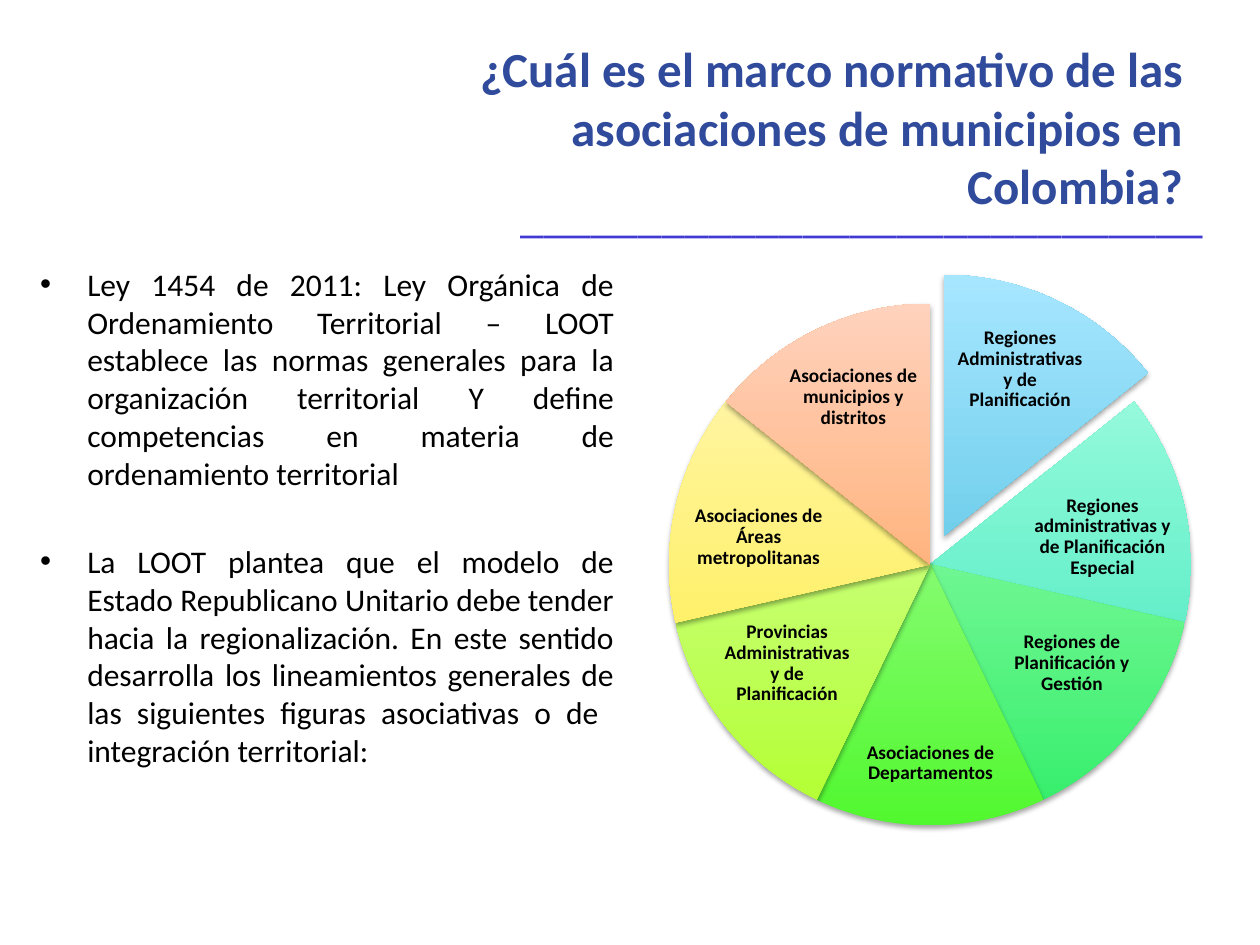
"""Build a slide on the legal framework of municipal associations in Colombia."""
from lxml import etree
from pptx import Presentation
from pptx import util as u
from pptx.dml.color import RGBColor
from pptx.enum import shapes, text
from pptx.oxml.ns import qn


def colour(value):
    return RGBColor.from_string(value)


def write(words, at, size, shade="000000", bold=False, align="CENTER",
          anchor="MIDDLE", inset=(0.25, 0.13), spacing=None, bullet=None, gap=0):
    box = page.shapes.add_textbox(*[u.Cm(n) for n in at])
    frame = box.text_frame
    frame.word_wrap = True
    frame.vertical_anchor = getattr(text.MSO_ANCHOR, anchor)
    frame.margin_left = frame.margin_right = u.Cm(inset[0])
    frame.margin_top = frame.margin_bottom = u.Cm(inset[1])
    for index, line in enumerate(words):
        para = frame.add_paragraph() if index else frame.paragraphs[0]
        para.text = line
        para.alignment = getattr(text.PP_ALIGN, align)
        if spacing:
            para.line_spacing = spacing
        if index:
            para.space_before = u.Pt(gap)
        if bullet:
            props = para._p.get_or_add_pPr()
            props.set("marL", str(u.Cm(0.95)))
            props.set("indent", str(-u.Cm(0.95)))
            etree.SubElement(props, qn("a:buFont"), typeface="Arial")
            etree.SubElement(props, qn("a:buChar"), char=bullet)
        for span in para.runs:
            span.font.name = "Calibri"
            span.font.size = u.Pt(size)
            span.font.bold = bold
            span.font.color.rgb = colour(shade)


deck = Presentation()
deck.slide_width, deck.slide_height = u.Cm(25.4), u.Cm(19.05)
page = deck.slides.add_slide(deck.slide_layouts[6])

write(["_" * 29 + "\v"], (1.3, 3.73, 23.19, 2.21), 27, shade="413AD2",
      align="RIGHT", anchor="TOP", inset=(0.25, 0))
write(["¿Cuál es el marco normativo de las asociaciones de municipios en Colombia?"],
      (8.71, 1.09, 15.39, 2.92), 28, shade="304A9C", bold=True, align="RIGHT")
write(["Ley 1454 de 2011: Ley Orgánica de Ordenamiento Territorial – LOOT establece "
       "las normas generales para la organización territorial Y define competencias "
       "en materia de ordenamiento territorial",
       "La LOOT plantea que el modelo de Estado Republicano Unitario debe tender "
       "hacia la regionalización. En este sentido desarrolla los lineamientos "
       "generales de las siguientes figuras asociativas o de  integración territorial:"],
      (0.56, 5.21, 12.07, 11.53), 18, align="JUSTIFY", anchor="TOP",
      bullet="•", gap=28.8)

slices = [
    ("Regiones Administrativas y de Planificación",
     "39B7D8", "A7E6FF", (19.13, 6.55, 2.87, 1.8)),
    ("Regiones administrativas y de Planificación Especial",
     "35E4B8", "ABFFE3", (20.7, 9.86, 3.05, 1.93)),
    ("Regiones de Planificación y Gestión",
     "32EE69", "AFFFBD", (20.24, 12.37, 2.74, 2.01)),
    ("Asociaciones de Departamentos",
     "51F82F", "B9FFB2", (17.35, 14.38, 2.82, 2.01)),
    ("Provincias Administrativas y de Planificación",
     "B2FF2F", "DBFFB6", (14.5, 12.37, 2.74, 2.01)),
    ("Asociaciones de Áreas metropolitanas",
     "FFED37", "FFF6B9", (13.77, 9.86, 3.05, 1.93)),
    ("Asociaciones de municipios y distritos",
     "FF953E", "FFD2BD", (15.77, 7.11, 2.87, 1.8)),
]
turn = 216
step = turn / len(slices)
for index, (label, low, high, place) in enumerate(slices):
    left, top = (13.49, 6.12) if index else (13.77, 5.54)
    wedge = page.shapes.add_shape(shapes.MSO_SHAPE.PIE, u.Cm(left), u.Cm(top),
                                  u.Cm(10.52), u.Cm(10.52))
    start = turn * 0.75 + index * step
    wedge.adjustments[0] = start % turn
    wedge.adjustments[1] = (start + step) % turn
    wedge.fill.gradient()
    wedge.fill.gradient_angle = 90
    for stop, shade in zip(wedge.fill.gradient_stops, (low, high)):
        stop.color.rgb = colour(shade)
    wedge.line.fill.background()
    wedge.shadow.inherit = False
    effects = wedge._element.spPr.find(qn("a:effectLst"))
    shadow = etree.SubElement(effects, qn("a:outerShdw"), blurRad=str(u.Pt(3.1)),
                              dist=str(u.Pt(1.8)), dir="5400000", rotWithShape="0")
    black = etree.SubElement(shadow, qn("a:srgbClr"), val="000000")
    etree.SubElement(black, qn("a:alpha"), val="35000")
    write([label], place, 11, bold=True, inset=(0.05, 0.05), spacing=0.9)

deck.save("out.pptx")
